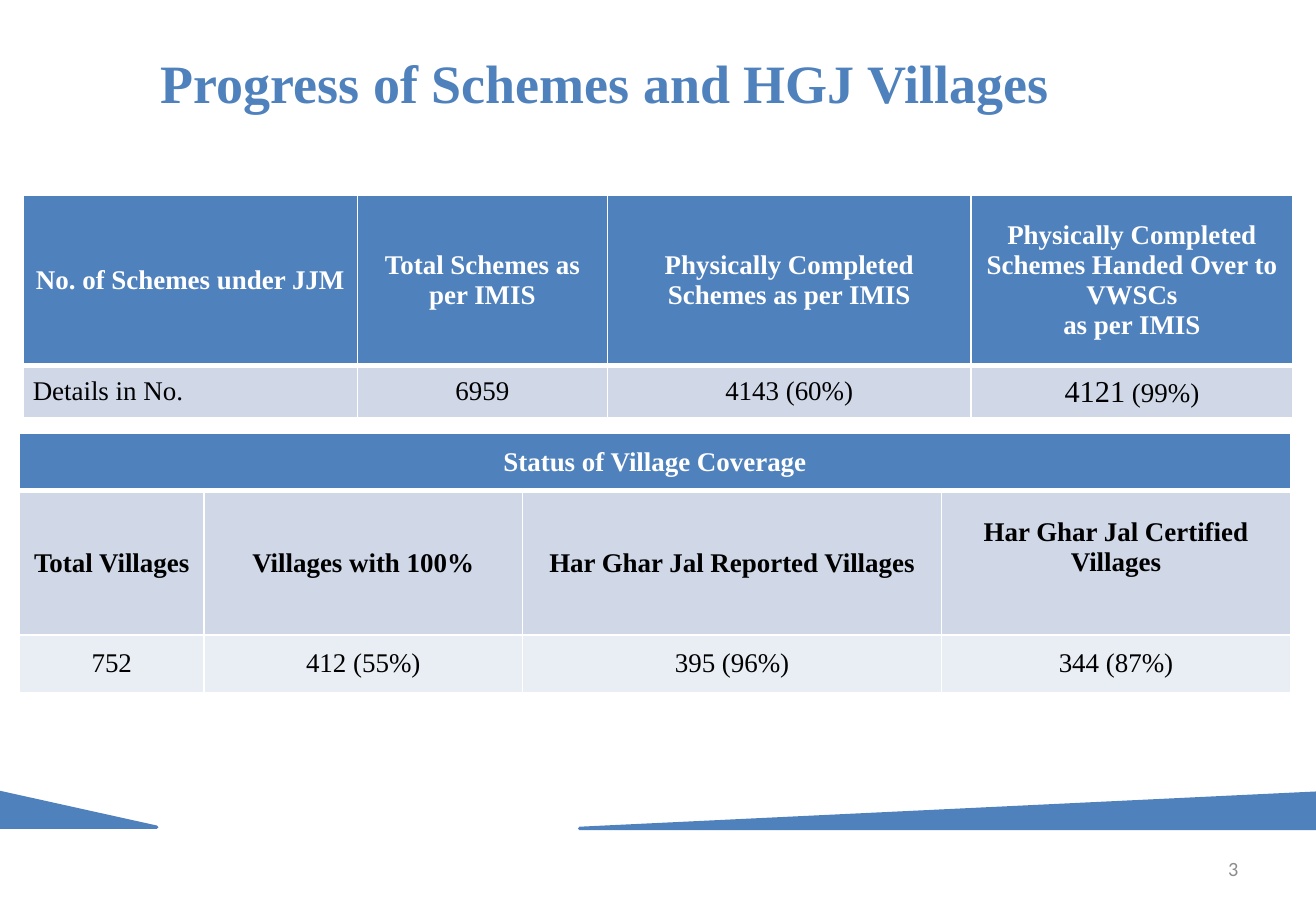
from lxml import etree
from pptx import Presentation
from pptx import util as u
from pptx.dml.color import RGBColor
from pptx.enum import shapes, text
from pptx.oxml import ns

BLUE = RGBColor(0x4F, 0x81, 0xBD)
PALE = RGBColor(0xD0, 0xD8, 0xE8)
PALER = RGBColor(0xE9, 0xED, 0xF4)
WHITE = RGBColor(0xFF, 0xFF, 0xFF)
BLACK = RGBColor(0, 0, 0)
GRAY = RGBColor(0x8C, 0x8C, 0x8C)
SERIF = "Times New Roman"
CENTER = text.PP_ALIGN.CENTER
LEFT = text.PP_ALIGN.LEFT
MIDDLE = text.MSO_ANCHOR.MIDDLE

HEAD = (BLUE, WHITE, True)
SUBHEAD = (PALE, BLACK, True)
DETAIL = (PALE, BLACK, False)
COUNT = (PALER, BLACK, False)


def set_font(font, face, size, color, bold=False):
    font.name = face
    font.size = u.Pt(size)
    font.bold = bold
    font.color.rgb = color


def add_line(slide, box, wording, align, face, size, color, bold=False):
    label = slide.shapes.add_textbox(*map(u.Inches, box))
    frame = label.text_frame
    frame.word_wrap = True
    frame.vertical_anchor = MIDDLE
    line = frame.paragraphs[0]
    line.text = wording
    line.alignment = align
    set_font(line.font, face, size, color, bold)
    return frame


def add_title(slide, box):
    frame = add_line(slide, box, "Progress of Schemes and HGJ Villages",
                     CENTER, SERIF, 32, BLUE, True)
    frame.margin_right = u.Inches(0.91)
    frame.margin_left = u.Inches(0.08)
    frame.paragraphs[0].line_spacing = 0.9


def add_wedge(slide, box, peak):
    wedge = slide.shapes.add_shape(shapes.MSO_SHAPE.ISOSCELES_TRIANGLE, *map(u.Inches, box))
    wedge.adjustments[0] = peak
    wedge.shadow.inherit = False
    wedge.fill.solid()
    wedge.fill.fore_color.rgb = BLUE
    wedge.line.color.rgb = BLUE
    wedge.line.width = u.Pt(2)


def add_borders(cell, top, bottom):
    props = cell._tc.get_or_add_tcPr()
    widths = {"lnL": 1, "lnR": 1, "lnT": top, "lnB": bottom}
    for place, (side, points) in enumerate(widths.items()):
        border = etree.Element(ns.qn(f"a:{side}"), w=str(u.Pt(points)))
        fill = etree.SubElement(border, ns.qn("a:solidFill"))
        etree.SubElement(fill, ns.qn("a:srgbClr"), val=str(WHITE))
        props.insert(place, border)


def fill_cell(cell, wording, style, align=CENTER):
    background, color, bold = style
    cell.fill.solid()
    cell.fill.fore_color.rgb = background
    cell.vertical_anchor = MIDDLE
    cell.margin_left = cell.margin_right = u.Inches(0.08)
    cell.margin_top = cell.margin_bottom = u.Inches(0.04)
    cell.text = wording
    for line in cell.text_frame.paragraphs:
        line.alignment = align
        set_font(line.font, SERIF, 16, color, bold)


def add_grid(slide, origin, widths, heights, rows, styles):
    box = (*origin, sum(widths), sum(heights))
    grid = slide.shapes.add_table(len(rows), len(widths), *map(u.Inches, box)).table
    grid.horz_banding = False
    for column, width in zip(grid.columns, widths):
        column.width = u.Inches(width)
    for row, height in zip(grid.rows, heights):
        row.height = u.Inches(height)
    for r, (wordings, style) in enumerate(zip(rows, styles)):
        for c, wording in enumerate(wordings):
            cell = grid.cell(r, c)
            fill_cell(cell, wording, style)
            add_borders(cell, top=3 if r == 1 else 1, bottom=3 if r == 0 else 1)
    return grid


def add_schemes(slide, origin):
    grid = add_grid(
        slide, origin, [2.75, 2.06, 2.99, 2.65], [1.4, 0.43],
        [["No. of Schemes under JJM", "Total Schemes as per IMIS",
          "Physically Completed Schemes as per IMIS",
          "Physically Completed Schemes Handed Over to VWSCs\nas per IMIS"],
         ["Details in No.", "6959", "4143 (60%)", "4121"]],
        [HEAD, DETAIL])
    grid.cell(1, 0).text_frame.paragraphs[0].alignment = LEFT
    handed_over = grid.cell(1, 3).text_frame.paragraphs[0]
    handed_over.runs[0].font.size = u.Pt(18)
    handed_over.add_run().text = " (99%)"


def add_villages(slide, origin):
    grid = add_grid(
        slide, origin, [1.52, 2.62, 3.45, 2.87], [0.47, 1.19, 0.47],
        [["Status of Village Coverage", "", "", ""],
         ["Total Villages", "Villages with 100%", "Har Ghar Jal Reported Villages",
          "Har Ghar Jal Certified Villages"],
         ["752", "412 (55%)", "395 (96%)", "344 (87%)"]],
        [HEAD, SUBHEAD, COUNT])
    grid.cell(0, 0).merge(grid.cell(0, 3))
    grid.cell(1, 3).margin_bottom = u.Inches(0.29)


def main():
    deck = Presentation()
    deck.slide_width = u.Inches(10.83)
    deck.slide_height = u.Inches(7.5)
    slide = deck.slides.add_slide(deck.slide_layouts[6])
    add_line(slide, (7.76, 6.95, 2.53, 0.4), "3", text.PP_ALIGN.RIGHT, "Calibri", 12, GRAY)
    add_title(slide, (-0.02, 0.28, 10.83, 0.85))
    add_wedge(slide, (-0.02, 6.52, 1.31, 0.29), 0)
    add_wedge(slide, (4.77, 6.53, 6.06, 0.29), 1)
    add_schemes(slide, (0.19, 1.61))
    add_villages(slide, (0.16, 3.57))
    deck.save("out.pptx")


if __name__ == "__main__":
    main()
